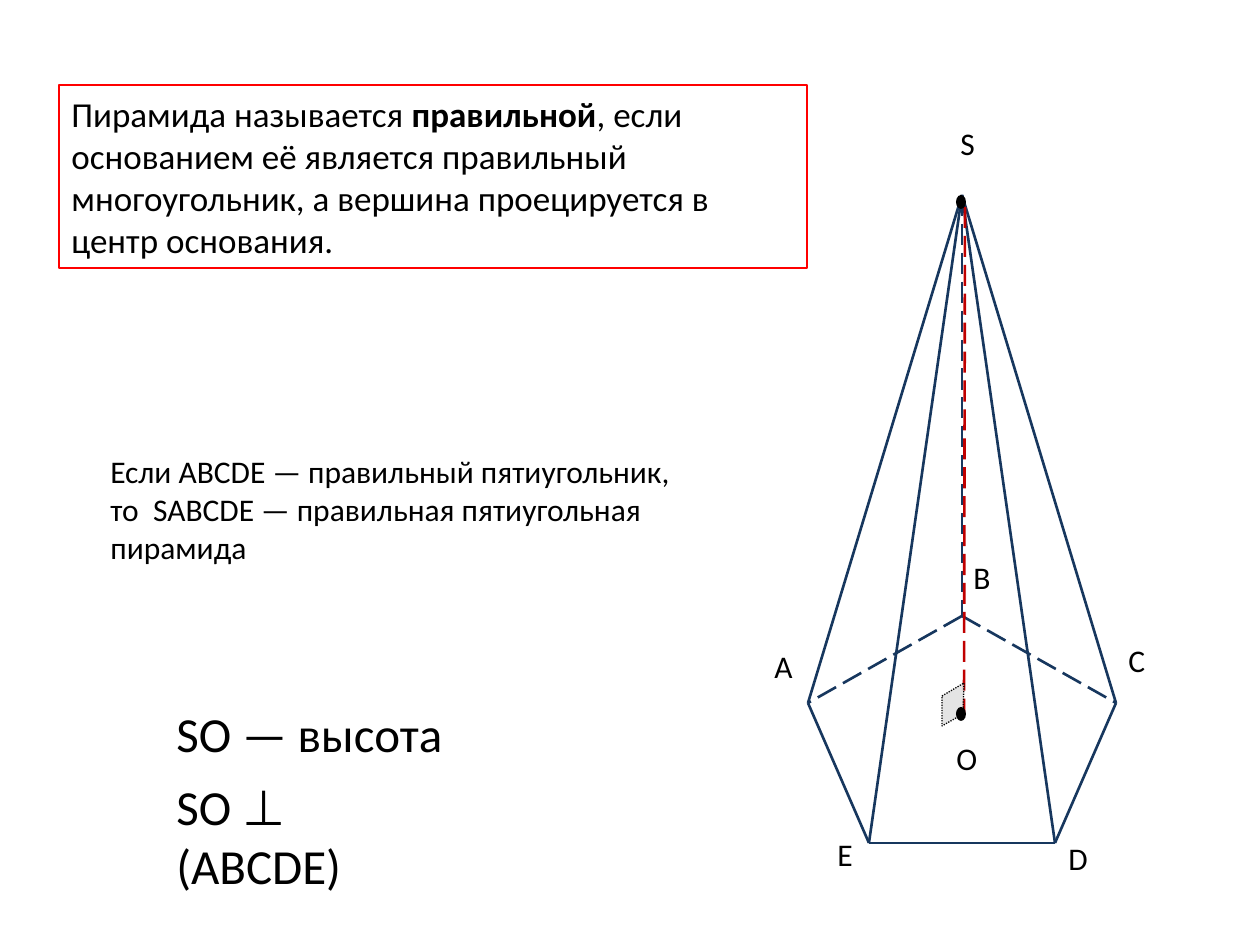
from lxml import etree
from pptx import Presentation, util as u
from pptx.dml.color import RGBColor
from pptx.enum import dml, shapes, text
from pptx.oxml.ns import qn

# Content: lengths in px, 126 to the inch
COLORS = {"text": "000000", "frame": "FF0000", "edge": "17375E",
          "height": "C00000", "angle": "D9D9D9"}
FONT = "Calibri"
DEFINITION = [[("Пирамида называется ", False), ("правильной", True),
               (", если основанием её является правильный многоугольник, "
                "а вершина проецируется в центр основания.", False)]]
EXAMPLE = [[("Если ABCDE — правильный пятиугольник,", False)],
           [("то  SABCDE — правильная пятиугольная пирамида", False)]]
HEIGHT_NOTES = [("SO — высота", (164, 697, 295, 72)),
                ("SO ⊥ (ABCDE)", (164, 770, 290, 72))]
VERTICES = {"S": (962, 195), "A": (808, 703), "B": (962, 616),
            "C": (1116, 703), "D": (1055, 843), "E": (869, 843)}
HIDDEN_EDGES = ["SB", "BA", "BC"]
VISIBLE_EDGES = ["SA", "SC", "SD", "SE", "AE", "ED", "DC"]
LABELS = [("А", 762, 641), ("В", 961, 552), ("С", 1116, 635), ("D", 1056, 833),
          ("Е", 825, 829), ("S", 948, 118), ("O", 944, 733)]
HEIGHT = [(965, 207), (964, 713)]
RIGHT_ANGLE = [(942, 696), (964, 683), (963, 714), (942, 726)]
POINTS = [(956, 707), (956, 195)]

PX = 914400 / 126


def px(*values):
    return [round(v * PX) for v in values]


def rgb(name):
    return RGBColor.from_string(COLORS[name])


def style_line(line, color, width=1.5, dash=None):
    line.color.rgb = rgb(color)
    line.width = u.Pt(width)
    if dash:
        line.dash_style = dash


def write(shape, paragraphs, size, wrap=True, anchor=text.MSO_ANCHOR.TOP):
    frame = shape.text_frame
    frame.word_wrap = wrap
    frame.vertical_anchor = anchor
    for i, runs in enumerate(paragraphs):
        paragraph = frame.add_paragraph() if i else frame.paragraphs[0]
        paragraph.alignment = text.PP_ALIGN.LEFT
        for content, bold in runs:
            run = paragraph.add_run()
            run.text = content
            run.font.name = FONT
            run.font.size = u.Pt(size)
            run.font.bold = bold
            run.font.color.rgb = rgb("text")


def draw_line(parent, start, end, color, dash=None):
    line = parent.add_connector(shapes.MSO_CONNECTOR.STRAIGHT, *px(*start, *end))
    style_line(line.line, color, dash=dash)
    etree.SubElement(line._element.spPr, qn("a:effectLst"))


prs = Presentation()
prs.slide_width, prs.slide_height = u.Inches(10), u.Inches(7.5)
slide = prs.slides.add_slide(prs.slide_layouts[6])
canvas = slide.shapes

# Definition and notes on the height
definition = canvas.add_shape(shapes.MSO_SHAPE.RECTANGLE, *px(59, 85, 748, 183))
definition.shadow.inherit = False
definition.fill.background()
style_line(definition.line, "frame")
write(definition, DEFINITION, 20, anchor=text.MSO_ANCHOR.MIDDLE)
for note, box in HEIGHT_NOTES:
    write(canvas.add_textbox(*px(*box)), [[(note, False)]], 28)

# Pyramid edges
pyramid = canvas.add_group_shape().shapes
for edges, dash in ((HIDDEN_EDGES, dml.MSO_LINE.LONG_DASH), (VISIBLE_EDGES, None)):
    for first, last in edges:
        draw_line(pyramid, VERTICES[first], VERTICES[last], "edge", dash)

# Vertex labels
for letter, left, top in LABELS:
    write(canvas.add_textbox(*px(left, top, 44, 50)), [[(letter, False)]], 18, wrap=False)

# Height, right angle and end points
draw_line(canvas, *HEIGHT, "height", dml.MSO_LINE.LONG_DASH)
outline = canvas.build_freeform(*RIGHT_ANGLE[0], scale=PX)
outline.add_line_segments(RIGHT_ANGLE[1:], close=True)
angle = outline.convert_to_shape()
angle.shadow.inherit = False
angle.fill.solid()
angle.fill.fore_color.rgb = rgb("angle")
fill_color = angle._element.spPr.find(qn("a:solidFill"))[0]
etree.SubElement(fill_color, qn("a:alpha"), val="70000")
style_line(angle.line, "text", 0.75, dml.MSO_LINE.ROUND_DOT)
for left, top in POINTS:
    point = canvas.add_shape(shapes.MSO_SHAPE.OVAL, *px(left, top, 10, 14))
    point.shadow.inherit = False
    point.fill.solid()
    point.fill.fore_color.rgb = rgb("text")
    point.line.fill.background()

# Example
write(canvas.add_textbox(*px(98, 446, 650, 127)), EXAMPLE, 18)

prs.save("out.pptx")
